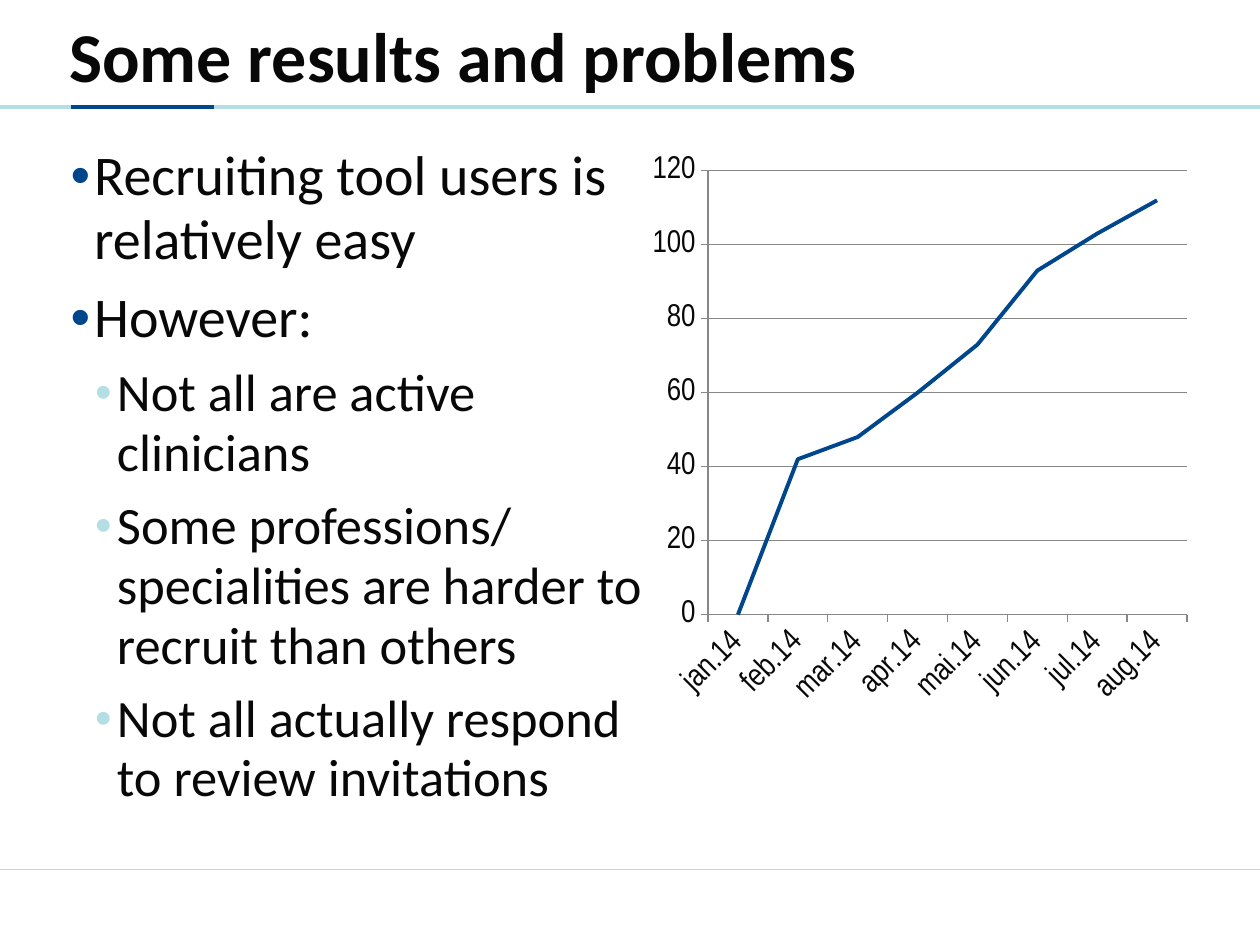
import pptx
import pptx.chart.data
import pptx.dml.color
import pptx.enum.chart
import pptx.enum.shapes
import pptx.enum.text
import pptx.oxml
import pptx.oxml.ns
import pptx.util

Pt = pptx.util.Pt

# Content
TITLE = "Some results and problems"
BULLETS = [
    (0, "Recruiting tool users is relatively easy"),
    (0, "However:"),
    (1, "Not all are active clinicians"),
    (1, "Some professions/ specialities are harder to recruit than others"),
    (1, "Not all actually respond to review invitations"),
]
USERS = {"jan.14": 0, "feb.14": 42, "mar.14": 48, "apr.14": 60,
         "mai.14": 73, "jun.14": 93, "jul.14": 103, "aug.14": 112}

# Style
INK, NAVY, AQUA, SILVER, GRID = "080808", "00468C", "B3DEE3", "D0D0D0", "878787"
LEVELS = [
    dict(size=32, indent=13.5, hang=13.5, bullet_color=NAVY, bullet_size=100),
    dict(size=30, indent=26.5, hang=12.5, bullet_color=AQUA, bullet_size=90),
]
# Left end, right end, height on the page, colour, width
RULES = [
    (0, 720, 496.8, SILVER, 1),
    (0, 720, 61.2, AQUA, 2),
    (40.5, 122.4, 61.2, NAVY, 2),
]


def color(value):
    return pptx.dml.color.RGBColor.from_string(value)


def add_rule(page, left, right, height, line_color, width):
    rule = page.shapes.add_connector(
        pptx.enum.shapes.MSO_CONNECTOR.STRAIGHT,
        Pt(left), Pt(height), Pt(right), Pt(height))
    rule.line.color.rgb = color(line_color)
    rule.line.width = Pt(width)
    rule._element.spPr.append(pptx.oxml.parse_xml(
        f"<a:effectLst {pptx.oxml.ns.nsdecls('a')}/>"))


def add_box(page, left, top, width, height, margins, anchor):
    box = page.shapes.add_textbox(Pt(left), Pt(top), Pt(width), Pt(height))
    frame = box.text_frame
    frame.word_wrap = True
    frame.vertical_anchor = anchor
    (frame.margin_left, frame.margin_top,
     frame.margin_right, frame.margin_bottom) = map(Pt, margins)
    return frame


def add_bullet(para, indent, hang, bullet_color, bullet_size):
    properties = para._p.get_or_add_pPr()
    properties.set("marL", str(Pt(indent)))
    properties.set("indent", str(-Pt(hang)))
    space = pptx.oxml.ns.nsdecls("a")
    for part in (
        f'<a:buClr {space}><a:srgbClr val="{bullet_color}"/></a:buClr>',
        f'<a:buSzPct {space} val="{bullet_size * 1000}"/>',
        f'<a:buFont {space} typeface="Arial"/>',
        f'<a:buChar {space} char="•"/>',
    ):
        properties.append(pptx.oxml.parse_xml(part))


def write(para, text, size, bold=False, spacing=1.0, before=0):
    para.line_spacing = spacing
    para.space_before = Pt(before)
    span = para.add_run()
    span.text = text
    span.font.name = "Calibri"
    span.font.size = Pt(size)
    span.font.bold = bold
    span.font.color.rgb = color(INK)


def add_users_chart(page):
    data = pptx.chart.data.CategoryChartData()
    data.categories = list(USERS)
    data.add_series("Series 1", list(USERS.values()))
    chart = page.shapes.add_chart(
        pptx.enum.chart.XL_CHART_TYPE.LINE,
        Pt(366.5), Pt(82.8), Pt(318.2), Pt(326.2), data).chart
    chart.has_title = False
    chart.has_legend = False
    chart.font.name = "Arial Narrow"
    chart.font.size = Pt(18)
    chart.font.color.rgb = color(INK)

    plot = chart.plots[0]
    plot.vary_by_categories = False
    line = plot.series[0]
    line.smooth = False
    line.marker.style = pptx.enum.chart.XL_MARKER_STYLE.NONE
    line.format.line.color.rgb = color(NAVY)
    line.format.line.width = Pt(2.25)

    months, counts = chart.category_axis, chart.value_axis
    counts.minimum_scale, counts.maximum_scale, counts.major_unit = 0, 120, 20
    months.has_major_gridlines = False
    counts.has_major_gridlines = True
    for axis in (months, counts):
        axis.major_tick_mark = pptx.enum.chart.XL_TICK_MARK.OUTSIDE
        axis.minor_tick_mark = pptx.enum.chart.XL_TICK_MARK.NONE
        axis.tick_labels.font.size = Pt(18)
    for part in (months, counts, counts.major_gridlines):
        part.format.line.color.rgb = color(GRID)
        part.format.line.width = Pt(0.75)
    # Slanted month labels
    body = months._element.txPr.find(pptx.oxml.ns.qn("a:bodyPr"))
    body.set("rot", str(-45 * 60000))
    body.set("vert", "horz")


def main():
    deck = pptx.Presentation()
    deck.slide_width, deck.slide_height = Pt(720), Pt(540)
    page = deck.slides.add_slide(deck.slide_layouts[6])
    anchors = pptx.enum.text.MSO_ANCHOR

    # Rules and title
    for rule in RULES:
        add_rule(page, *rule)
    title = add_box(page, 0, 11.5, 720, 45.4, (39.6, 2.9, 5.8, 0), anchors.MIDDLE)
    write(title.paragraphs[0], TITLE, size=40, bold=True, spacing=0.8)

    add_users_chart(page)

    # Bullet list
    frame = add_box(page, 25.9, 82.8, 356.4, 356.4, (14.4, 0, 14.4, 2.9), anchors.TOP)
    for index, (level, text) in enumerate(BULLETS):
        para = frame.add_paragraph() if index else frame.paragraphs[0]
        para.level = level
        style = dict(LEVELS[level])
        size = style.pop("size")
        add_bullet(para, **style)
        write(para, text, size=size, spacing=0.95, before=size / 4 if index else 0)

    deck.save("out.pptx")


if __name__ == "__main__":
    main()
